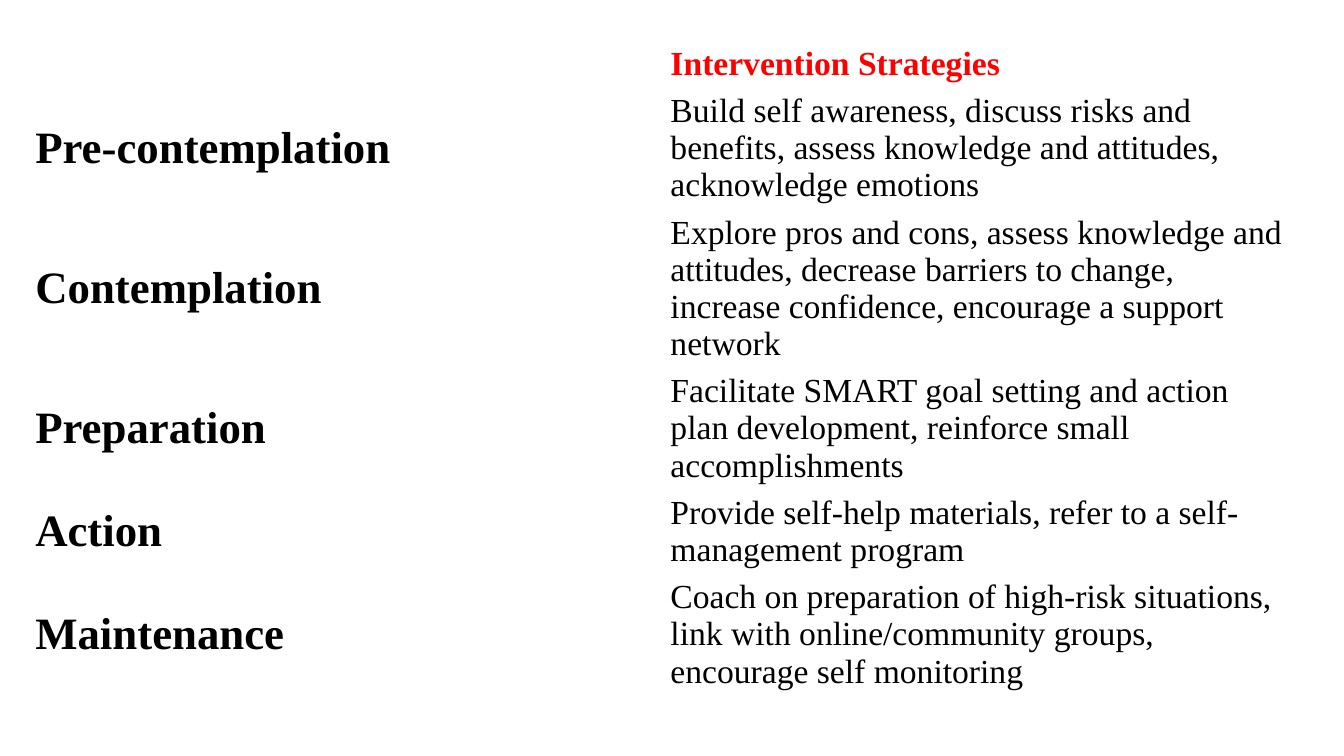
from lxml.etree import SubElement as Sub
from pptx import Presentation
from pptx.dml.color import RGBColor
from pptx.enum.text import MSO_ANCHOR as Anchor
from pptx.oxml.ns import qn
from pptx.util import Inches, Pt

FONT = "Times New Roman"
WHITE, BLACK, RED = "FFFFFF", "000000", "FF0000"

STAGES = [
    ("Pre-contemplation", 0.98,
     "Build self awareness, discuss risks and benefits, "
     "assess knowledge and attitudes, acknowledge emotions"),
    ("Contemplation", 1.28,
     "Explore pros and cons, assess knowledge and attitudes, decrease barriers "
     "to change, increase confidence, encourage a support network"),
    ("Preparation", 0.98,
     "Facilitate SMART goal setting and action plan development, "
     "reinforce small accomplishments"),
    ("Action", 0.68,
     "Provide self-help materials, refer to a self-management program"),
    ("Maintenance", 0.98,
     "Coach on preparation of high-risk situations, link with "
     "online/community groups, encourage self monitoring"),
]


def color(code):
    return RGBColor.from_string(code)


class Deck:
    def __init__(self):
        self.prs = Presentation()
        self.prs.slide_width = Inches(13.33)
        self.prs.slide_height = Inches(7.5)
        self.slide = self.prs.slides.add_slide(self.prs.slide_layouts[6])

    def table(self, left, top, height, widths, heights):
        frame = self.slide.shapes.add_table(
            len(heights), len(widths), Inches(left), Inches(top),
            Inches(sum(widths)), Inches(height))
        grid = frame.table
        for col, width in zip(grid.columns, widths):
            col.width = Inches(width)
        for row, size in zip(grid.rows, heights):
            row.height = Inches(size)
        frame.height = Inches(height)
        return grid

    def cell(self, cell, text, size, hue=BLACK, bold=False, top=1, bottom=1):
        cell.vertical_anchor = Anchor.MIDDLE
        self.border(cell, L=1, R=1, T=top, B=bottom)
        cell.fill.solid()
        cell.fill.fore_color.rgb = color(WHITE)
        if text:
            run = cell.text_frame.paragraphs[0].add_run()
            run.text = text
            font = run.font
            font.name, font.size, font.bold = FONT, Pt(size), bold
            font.color.rgb = color(hue)

    def border(self, cell, **sides):
        """Draw white cell edges; must run before the cell gets its fill."""
        props = cell._tc.get_or_add_tcPr()
        for side, width in sides.items():
            line = Sub(props, qn(f"a:ln{side}"), w=str(Pt(width)))
            fill = Sub(line, qn("a:solidFill"))
            Sub(fill, qn("a:srgbClr"), val=WHITE)


def main():
    deck = Deck()
    heights = [0.41] + [height for _, height, _ in STAGES]
    grid = deck.table(0.25, 0.4, 7, [6.3, 6.3], heights)
    for col, text in enumerate(["", "Intervention Strategies"]):
        deck.cell(grid.cell(0, col), text, 24, RED, bold=True, bottom=3)
    for row, (stage, _, advice) in enumerate(STAGES, 1):
        top = 3 if row == 1 else 1
        deck.cell(grid.cell(row, 0), stage, 32, bold=True, top=top)
        deck.cell(grid.cell(row, 1), advice, 24, top=top)
    deck.prs.save("out.pptx")


if __name__ == "__main__":
    main()
